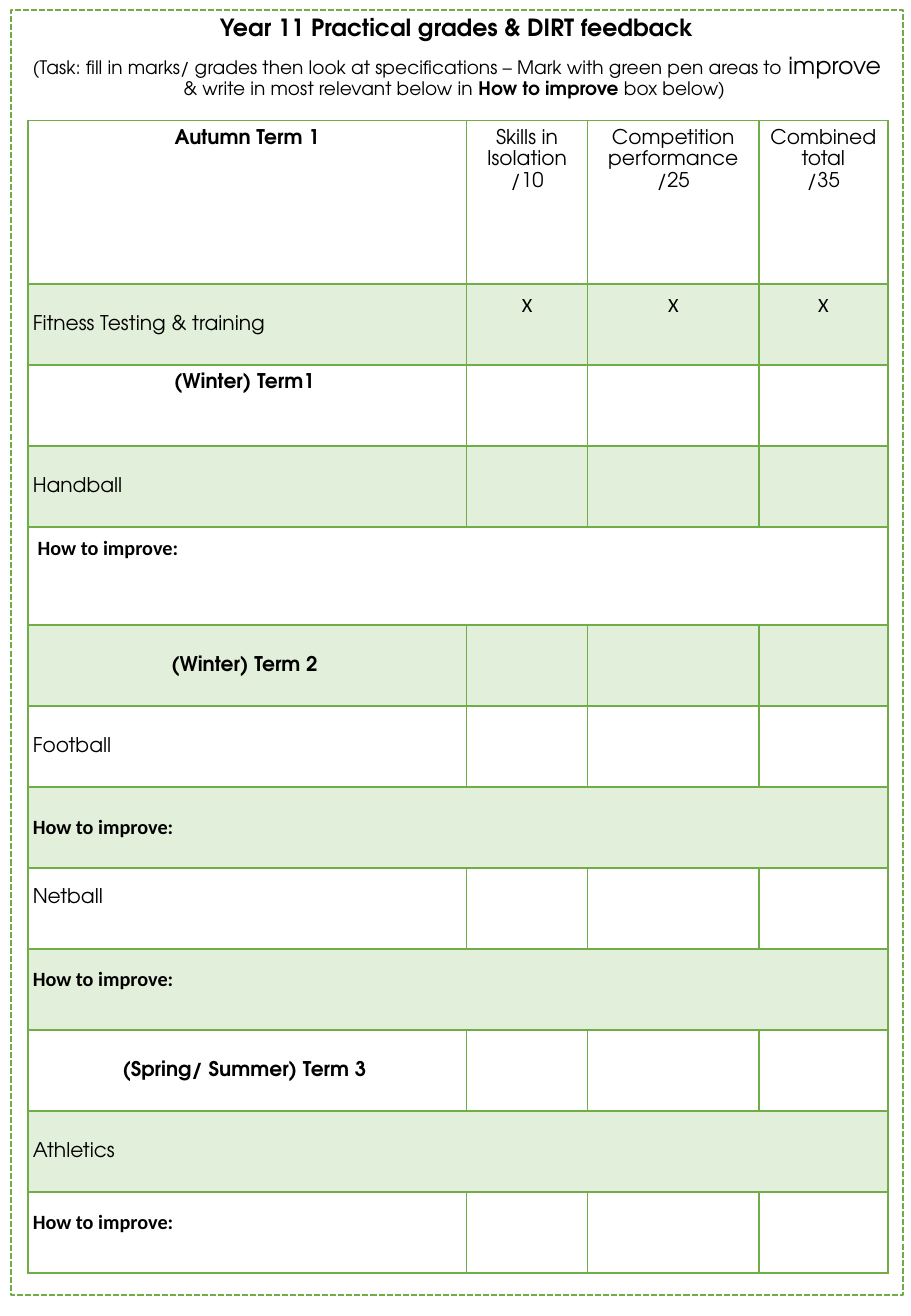
from dataclasses import dataclass

from lxml.etree import SubElement
from pptx import Presentation
from pptx.dml.color import RGBColor
from pptx.enum.dml import MSO_LINE
from pptx.enum.shapes import MSO_SHAPE
from pptx.enum.text import MSO_ANCHOR, PP_ALIGN
from pptx.oxml.ns import qn
from pptx.util import Inches, Pt

COLOURS = {"green": "70AD47", "tint": "E2EFDA", "white": "FFFFFF", "black": "000000"}
HEADING, BODY = "TeX Gyre Adventor", "Calibri"
PAGE_W, PAGE_H = 7.5, 10.83

# Table grid: widths are shares of the table, heights count standard rows
TABLE_LEFT, TABLE_TOP, TABLE_W, TABLE_H = 0.23, 0.99, 7.08, 9.49
COLUMN_SHARES = (0.51, 0.141, 0.199, 0.15)
HEADER_ROWS, NOTES_ROWS = 2.02, 1.21


@dataclass(frozen=True)
class Words:
    text: str
    size: float = 12
    bold: bool = False
    font: str = HEADING


@dataclass(frozen=True)
class Entry:
    lines: tuple[Words, ...] = ()
    centred: bool = False
    middle: bool = True
    spacing: float = 1.0
    left: float = 0.04
    bottom: float = 0.05


@dataclass(frozen=True)
class GradeRow:
    entries: tuple[Entry, ...]
    tinted: bool = False
    merged: bool = False
    units: float = 1


def top_entry(*lines: Words) -> Entry:
    return Entry(lines, centred=True, middle=False, spacing=1.15)


def term(name: str) -> Entry:
    return Entry((Words(name, bold=True),), centred=True)


def activity(name: str, bottom: float = 0.05) -> Entry:
    return Entry((Words(name),), bottom=bottom)


def improve(bottom: float = 0.05) -> Entry:
    return Entry((IMPROVE,), bottom=bottom)


IMPROVE = Words("How to improve:", bold=True, font=BODY)
RAISED = 0.22
MARK = top_entry(Words("X", font=BODY))

GRADE_ROWS = (
    GradeRow((top_entry(Words("Autumn Term 1", bold=True)),
              top_entry(Words("Skills in Isolation"), Words("/10")),
              top_entry(Words("Competition performance"), Words("/25")),
              top_entry(Words("Combined total"), Words("/35"))), units=HEADER_ROWS),
    GradeRow((activity("Fitness Testing & training"), MARK, MARK, MARK), tinted=True),
    GradeRow((top_entry(Words("(Winter) Term1 ", bold=True)),)),
    GradeRow((activity("Handball"),), tinted=True),
    GradeRow((Entry((IMPROVE,), middle=False, spacing=1.15, left=0.08),),
             merged=True, units=NOTES_ROWS),
    GradeRow((term("(Winter) Term 2 "),), tinted=True),
    GradeRow((activity("Football"),)),
    GradeRow((improve(),), tinted=True, merged=True),
    GradeRow((activity("Netball", RAISED),)),
    GradeRow((improve(RAISED),), tinted=True, merged=True),
    GradeRow((term("(Spring/ Summer) Term 3 "),)),
    GradeRow((activity("Athletics"),), tinted=True, merged=True),
    GradeRow((improve(RAISED),)),
)

INTRO = (
    (Words("Year 11 Practical grades & DIRT feedback", 14, True),),
    (Words("(Task: fill in marks/ grades then look at specifications – "
           "Mark with green pen areas to ", 11),
     Words("improve ", 14),
     Words("& write in most relevant below in ", 11),
     Words("How to improve ", 11, True),
     Words("box below) ", 11)),
)


def rgb(name: str) -> RGBColor:
    return RGBColor.from_string(COLOURS[name])


def add_words(paragraph, words: Words) -> None:
    run = paragraph.add_run()
    run.text = words.text
    run.font.size, run.font.bold, run.font.name = Pt(words.size), words.bold, words.font
    run.font.color.rgb = rgb("black")


def next_paragraph(frame, index: int):
    return frame.paragraphs[0] if index == 0 else frame.add_paragraph()


def draw_intro(slide) -> None:
    border = slide.shapes.add_shape(MSO_SHAPE.RECTANGLE, Inches(PAGE_W * 0.012),
                                    Inches(PAGE_H * 0.0074), Inches(PAGE_W * 0.979),
                                    Inches(PAGE_H * 0.977))
    border.shadow.inherit = False
    border.fill.background()
    border.line.color.rgb = rgb("green")
    border.line.width = Pt(1.2)
    border.line.dash_style = MSO_LINE.SQUARE_DOT
    frame = border.text_frame
    frame.word_wrap = True
    frame.vertical_anchor = MSO_ANCHOR.TOP
    for index, line in enumerate(INTRO):
        paragraph = next_paragraph(frame, index)
        paragraph.alignment = PP_ALIGN.CENTER
        paragraph.line_spacing, paragraph.space_before = 0.9, Pt(7.5)
        for words in line:
            add_words(paragraph, words)


def draw_borders(cell, top: float, bottom: float) -> None:
    properties = cell._tc.get_or_add_tcPr()
    for side, width in (("L", 1), ("R", 1), ("T", top), ("B", bottom)):
        line = SubElement(properties, qn(f"a:ln{side}"), w=str(Pt(width)))
        fill = SubElement(line, qn("a:solidFill"))
        SubElement(fill, qn("a:srgbClr"), val=COLOURS["green"])


def fill_entry(cell, entry: Entry) -> None:
    cell.margin_left, cell.margin_right = Inches(entry.left), Inches(0.04)
    cell.margin_top, cell.margin_bottom = Inches(0.05), Inches(entry.bottom)
    cell.vertical_anchor = MSO_ANCHOR.MIDDLE if entry.middle else MSO_ANCHOR.TOP
    for index, words in enumerate(entry.lines):
        paragraph = next_paragraph(cell.text_frame, index)
        paragraph.alignment = PP_ALIGN.CENTER if entry.centred else PP_ALIGN.LEFT
        paragraph.line_spacing = entry.spacing
        add_words(paragraph, words)


def draw_grades(slide) -> None:
    columns = len(COLUMN_SHARES)
    grades = slide.shapes.add_table(len(GRADE_ROWS), columns, Inches(TABLE_LEFT),
                                    Inches(TABLE_TOP), Inches(TABLE_W),
                                    Inches(TABLE_H)).table
    grades.first_row = grades.horz_banding = False
    for column, share in zip(grades.columns, COLUMN_SHARES):
        column.width = Inches(TABLE_W * share)
    unit = TABLE_H / sum(row.units for row in GRADE_ROWS)
    for r, row in enumerate(GRADE_ROWS):
        grades.rows[r].height = Inches(unit * row.units)
        if row.merged:
            grades.cell(r, 0).merge(grades.cell(r, columns - 1))
        for c in range(columns):
            cell = grades.cell(r, c)
            draw_borders(cell, top=2 if r == 1 else 1, bottom=2 if r == 0 else 1)
            cell.fill.solid()
            cell.fill.fore_color.rgb = rgb("tint" if row.tinted else "white")
            fill_entry(cell, row.entries[c] if c < len(row.entries) else Entry())


def main() -> None:
    deck = Presentation()
    deck.slide_width, deck.slide_height = Inches(PAGE_W), Inches(PAGE_H)
    slide = deck.slides.add_slide(deck.slide_layouts[6])
    draw_intro(slide)
    draw_grades(slide)
    deck.save("out.pptx")


if __name__ == "__main__":
    main()
